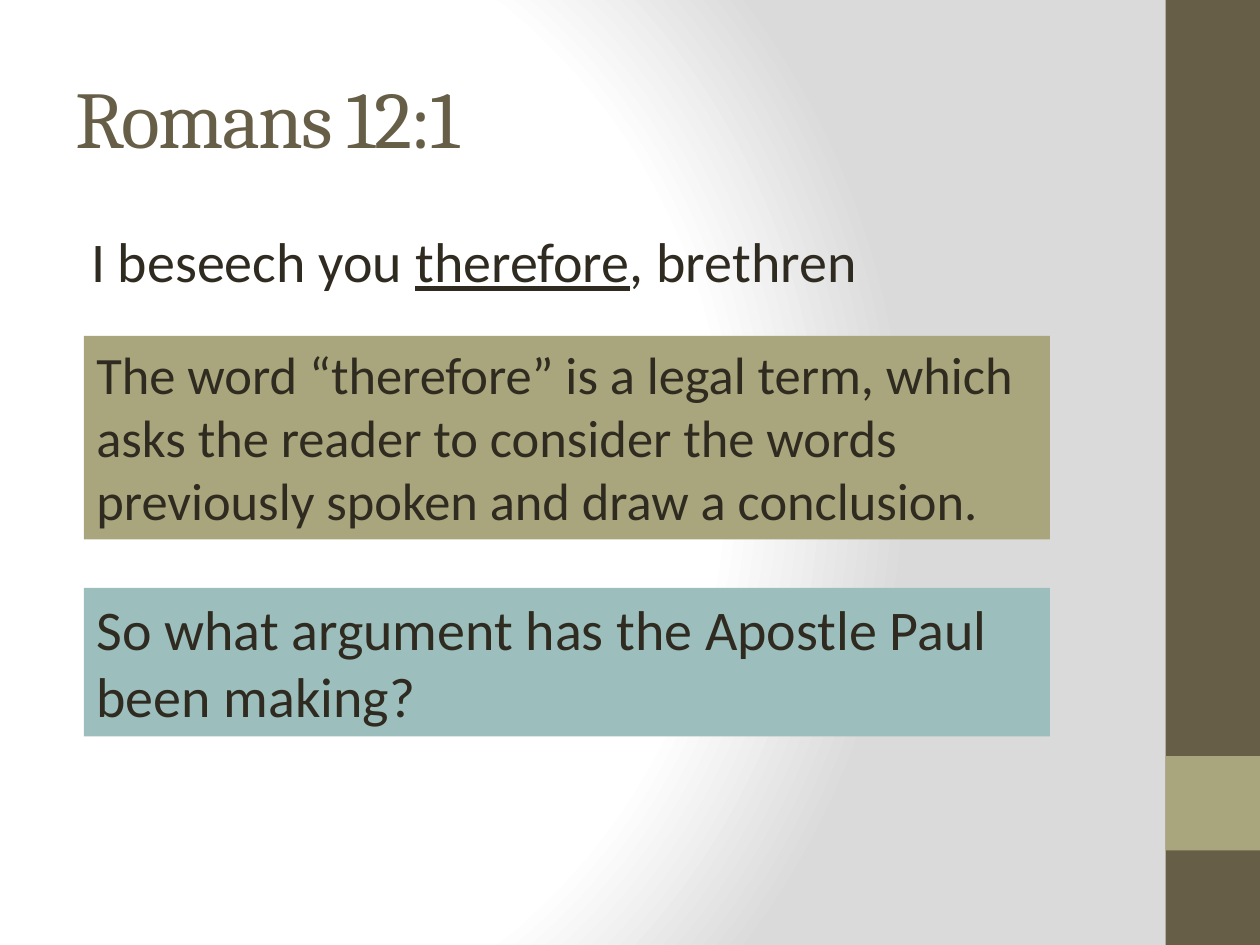
from pptx import Presentation
from pptx.dml.color import RGBColor
from pptx.enum.shapes import MSO_SHAPE
from pptx.enum.text import MSO_ANCHOR, PP_ALIGN
from pptx.oxml import parse_xml
from pptx.oxml.ns import nsdecls, qn
from pptx.util import Pt

BROWN = RGBColor(0x67, 0x5E, 0x47)
OLIVE = RGBColor(0xA9, 0xA5, 0x7C)
TEAL = RGBColor(0x9C, 0xBE, 0xBD)
INK = RGBColor(0x2F, 0x2B, 0x20)

WIDTH, HEIGHT = 720, 540
BAND = 54  # width of the side band and side of its square

# Content: text runs as (words, underlined)
TITLE = [("Romans 12:1", False)]
VERSE = [("I beseech you ", False), ("therefore", True), (", brethren", False)]
# Boxes: top, height, fill, font size, words
BOXES = [
    (192, 116.3, OLIVE, 30, "The word “therefore” is a legal term, which asks the reader "
     "to consider the words previously spoken and draw a conclusion."),
    (336, 84.8, TEAL, 32, "So what argument has the Apostle Paul been making?"),
]
BODY_FONT = {"name": "Calibri", "size": Pt(32)}
GRADIENT_STOPS = [(0, "FFFFFF"), (75, "FFFFFF"), (100, "DADADA")]


def add_rectangle(slide, left, top, width, height, fill):
    shape = slide.shapes.add_shape(
        MSO_SHAPE.RECTANGLE, Pt(left), Pt(top), Pt(width), Pt(height))
    shape.shadow.inherit = False
    shape.fill.solid()
    shape.fill.fore_color.rgb = fill
    shape.line.fill.background()
    return shape


def write_text(shape, runs, color, font_format, anchor=MSO_ANCHOR.TOP):
    frame = shape.text_frame
    frame.word_wrap = True
    frame.vertical_anchor = anchor
    paragraph = frame.paragraphs[0]
    paragraph.alignment = PP_ALIGN.LEFT
    for words, underlined in runs:
        run = paragraph.add_run()
        run.text = words
        run.font.color.rgb = color
        for name, value in {**font_format, "underline": underlined}.items():
            setattr(run.font, name, value)
    return paragraph


def set_background(slide):
    # Circular gradient centred on the left part of the slide
    slide.background.fill.gradient()
    gradient = slide.element.find(".//" + qn("a:gradFill"))
    stops = "".join(
        f'<a:gs pos="{position * 1000}"><a:srgbClr val="{color}"/></a:gs>'
        for position, color in GRADIENT_STOPS)
    circle = parse_xml(
        f'<a:gradFill {nsdecls("a")} rotWithShape="1"><a:gsLst>{stops}</a:gsLst>'
        '<a:path path="circle"><a:fillToRect l="20000" t="50000" r="100000" b="50000"/>'
        '</a:path></a:gradFill>')
    gradient.getparent().replace(gradient, circle)


def main():
    presentation = Presentation()
    presentation.slide_width, presentation.slide_height = Pt(WIDTH), Pt(HEIGHT)
    slide = presentation.slides.add_slide(presentation.slide_layouts[6])
    set_background(slide)

    # Side band with its square
    add_rectangle(slide, WIDTH - BAND, 0, BAND, HEIGHT, BROWN)
    add_rectangle(slide, WIDTH - BAND, HEIGHT - 2 * BAND, BAND, BAND, OLIVE)

    # Title, with tightened letters
    title = slide.shapes.add_textbox(Pt(36), Pt(21.6), Pt(600), Pt(90))
    paragraph = write_text(title, TITLE, BROWN, {"name": "Cambria", "size": Pt(46)},
                           MSO_ANCHOR.MIDDLE)
    paragraph.runs[0].font._element.set("spc", "-100")

    # Verse
    verse = slide.shapes.add_textbox(Pt(36), Pt(126), Pt(600), Pt(54))
    paragraph = write_text(verse, VERSE, INK, BODY_FONT)
    paragraph.space_before = Pt(6.4)
    paragraph._p.get_or_add_pPr().set("marL", str(Pt(9)))

    # Comment boxes
    for top, height, fill, size, words in BOXES:
        box = add_rectangle(slide, 48, top, 552, height, fill)
        write_text(box, [(words, False)], INK, {**BODY_FONT, "size": Pt(size)})

    presentation.save("out.pptx")


if __name__ == "__main__":
    main()
